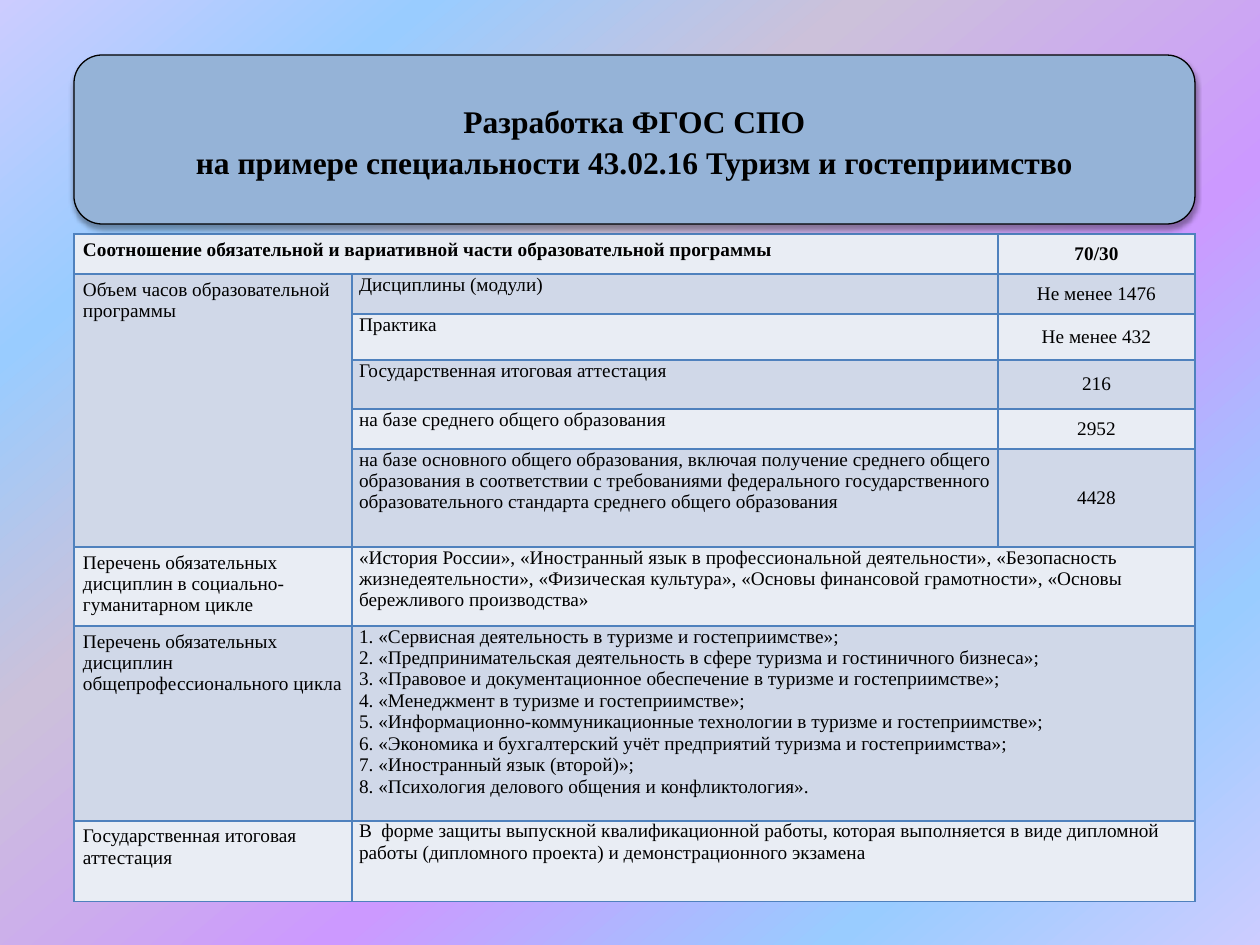
from dataclasses import dataclass

from lxml import etree
from pptx import Presentation
from pptx.dml.color import RGBColor
from pptx.enum.shapes import MSO_SHAPE
from pptx.enum.text import MSO_ANCHOR, PP_ALIGN
from pptx.oxml.ns import qn
from pptx.util import Pt

LEFT, CENTER = PP_ALIGN.LEFT, PP_ALIGN.CENTER
TOP, MIDDLE = MSO_ANCHOR.TOP, MSO_ANCHOR.MIDDLE
ROUNDED = MSO_SHAPE.ROUNDED_RECTANGLE
EMU_PER_PX = 914400 / 126


@dataclass(frozen=True)
class Theme:
    font: str = "Times New Roman"
    title_size: int = 18
    body_size: int = 11
    text: str = "000000"
    title_fill: str = "95B3D7"
    border: str = "4F81BD"
    bands: tuple = ("E9EDF4", "D0D8E8")
    backdrop: tuple = ((0, "CCCCFF"), (18, "99CCFF"), (36, "CCC1DA"),
                       (61, "CC99FF"), (82, "99CCFF"), (100, "CCCCFF"))
    backdrop_angle: int = 50


THEME = Theme()

TITLE = ["Разработка ФГОС СПО",
         "на примере специальности 43.02.16 Туризм и гостеприимство"]

DISCIPLINES = [
    "1. «Сервисная деятельность в туризме и гостеприимстве»;",
    "2. «Предпринимательская деятельность в сфере туризма и гостиничного бизнеса»;",
    "3. «Правовое и документационное обеспечение в туризме и гостеприимстве»;",
    "4. «Менеджмент в туризме и гостеприимстве»;",
    "5. «Информационно-коммуникационные технологии в туризме и гостеприимстве»;",
    "6. «Экономика и бухгалтерский учёт предприятий туризма и гостеприимства»;",
    "7. «Иностранный язык (второй)»;",
    "8. «Психология делового общения и конфликтология».",
]

# Each row: height in px, then the label, description and value columns.
ROWS = [
    (40, "Соотношение обязательной и вариативной части образовательной программы",
     None, "70/30"),
    (40, "Объем часов образовательной программы", "Дисциплины (модули)",
     "Не менее 1476"),
    (46, None, "Практика", "Не менее 432"),
    (49, None, "Государственная итоговая аттестация", "216"),
    (40, None, "на базе среднего общего образования", "2952"),
    (98, None, "на базе основного общего образования, включая получение среднего "
     "общего образования в соответствии с требованиями федерального "
     "государственного образовательного стандарта среднего общего образования",
     "4428"),
    (79, "Перечень обязательных дисциплин в социально-гуманитарном цикле",
     "«История России», «Иностранный язык в профессиональной деятельности», "
     "«Безопасность жизнедеятельности», «Физическая культура», «Основы финансовой "
     "грамотности», «Основы бережливого производства»", None),
    (195, "Перечень обязательных дисциплин общепрофессионального цикла",
     DISCIPLINES, None),
    (81, "Государственная итоговая аттестация",
     "В  форме защиты выпускной квалификационной работы, которая выполняется в виде "
     "дипломной работы (дипломного проекта) и демонстрационного экзамена", None),
]
MERGES = [((0, 0), (0, 1)), ((1, 0), (5, 0))] + [((r, 1), (r, 2)) for r in (6, 7, 8)]

COLUMNS = (278, 646, 197)
SIDE, TITLE_TOP, TITLE_HEIGHT, TABLE_TOP = 74, 55, 169, 234
WIDTH = sum(COLUMNS)
WIDE_INSETS = {"margin_left": 9, "margin_right": 9, "margin_top": 5, "margin_bottom": 5}
TIGHT_INSETS = {"margin_left": 7, "margin_right": 7, "margin_top": 0, "margin_bottom": 0}
COLUMN_FORMATS = [(LEFT, TOP, WIDE_INSETS), (LEFT, TOP, TIGHT_INSETS),
                  (CENTER, MIDDLE, TIGHT_INSETS)]


def px(length):
    return round(length * EMU_PER_PX)


def rgb(value):
    return RGBColor.from_string(value)


def add_node(parent, tag, **attributes):
    return etree.SubElement(parent, qn(tag), {k: str(v) for k, v in attributes.items()})


def write(text_frame, lines, size, bold, align, spacing=None):
    for index, line in enumerate(lines):
        paragraph = text_frame.paragraphs[0] if index == 0 else text_frame.add_paragraph()
        paragraph.alignment = align
        if spacing:
            paragraph.line_spacing = spacing
        run = paragraph.add_run()
        run.text = line
        font_format = {"name": THEME.font, "size": Pt(size), "bold": bold}
        for name, value in font_format.items():
            setattr(run.font, name, value)
        run.font.color.rgb = rgb(THEME.text)


def paint_background(slide):
    """Replace the default two-stop gradient by the theme's stops."""
    fill = slide.background.fill
    fill.gradient()
    gradient = slide.element.find(".//" + qn("a:gradFill"))
    for child in list(gradient):
        gradient.remove(child)
    stops = add_node(gradient, "a:gsLst")
    for position, color in THEME.backdrop:
        stop = add_node(stops, "a:gs", pos=position * 1000)
        add_node(stop, "a:srgbClr", val=color)
    add_node(gradient, "a:lin", ang=THEME.backdrop_angle * 60000, scaled=0)


def add_title(slide):
    shape = slide.shapes.add_shape(ROUNDED, px(SIDE), px(TITLE_TOP), px(WIDTH),
                                   px(TITLE_HEIGHT))
    shape.fill.solid()
    shape.fill.fore_color.rgb = rgb(THEME.title_fill)
    shape.line.color.rgb = rgb(THEME.text)
    shape.line.width = Pt(0.75)
    shape.shadow.inherit = False
    effects = shape.element.spPr.find(qn("a:effectLst"))
    shadow = add_node(effects, "a:outerShdw", blurRad=Pt(3.1), dist=Pt(1.8),
                      dir=90 * 60000, rotWithShape=0)
    color = add_node(shadow, "a:srgbClr", val=THEME.text)
    add_node(color, "a:alpha", val=35000)
    shape.text_frame.word_wrap = True
    shape.text_frame.vertical_anchor = MIDDLE
    write(shape.text_frame, TITLE, THEME.title_size, True, CENTER, 1.1)


def style_cell(cell, band, anchor, insets):
    cell.vertical_anchor = anchor
    for name, value in insets.items():
        setattr(cell, name, px(value))
    properties = cell._tc.get_or_add_tcPr()
    for side in ("a:lnL", "a:lnR", "a:lnT", "a:lnB"):
        border = add_node(properties, side, w=Pt(1))
        add_node(add_node(border, "a:solidFill"), "a:srgbClr", val=THEME.border)
    cell.fill.solid()
    cell.fill.fore_color.rgb = rgb(band)


def add_program_table(slide):
    heights = [row[0] for row in ROWS]
    table = slide.shapes.add_table(len(ROWS), len(COLUMNS), px(SIDE), px(TABLE_TOP),
                                   px(WIDTH), px(sum(heights))).table
    for column, width in zip(table.columns, COLUMNS):
        column.width = px(width)
    for row_index, (height, *texts) in enumerate(ROWS):
        table.rows[row_index].height = px(height)
        band = THEME.bands[row_index % 2]
        for column_index, text in enumerate(texts):
            align, anchor, insets = COLUMN_FORMATS[column_index]
            cell = table.cell(row_index, column_index)
            style_cell(cell, band, anchor, insets)
            if text:
                lines = [text] if isinstance(text, str) else text
                write(cell.text_frame, lines, THEME.body_size, row_index == 0, align)
    for first, last in MERGES:
        table.cell(*first).merge(table.cell(*last))


def main():
    presentation = Presentation()
    presentation.slide_width, presentation.slide_height = px(1260), px(945)
    slide = presentation.slides.add_slide(presentation.slide_layouts[6])
    paint_background(slide)
    add_program_table(slide)
    add_title(slide)
    presentation.save("out.pptx")


if __name__ == "__main__":
    main()
